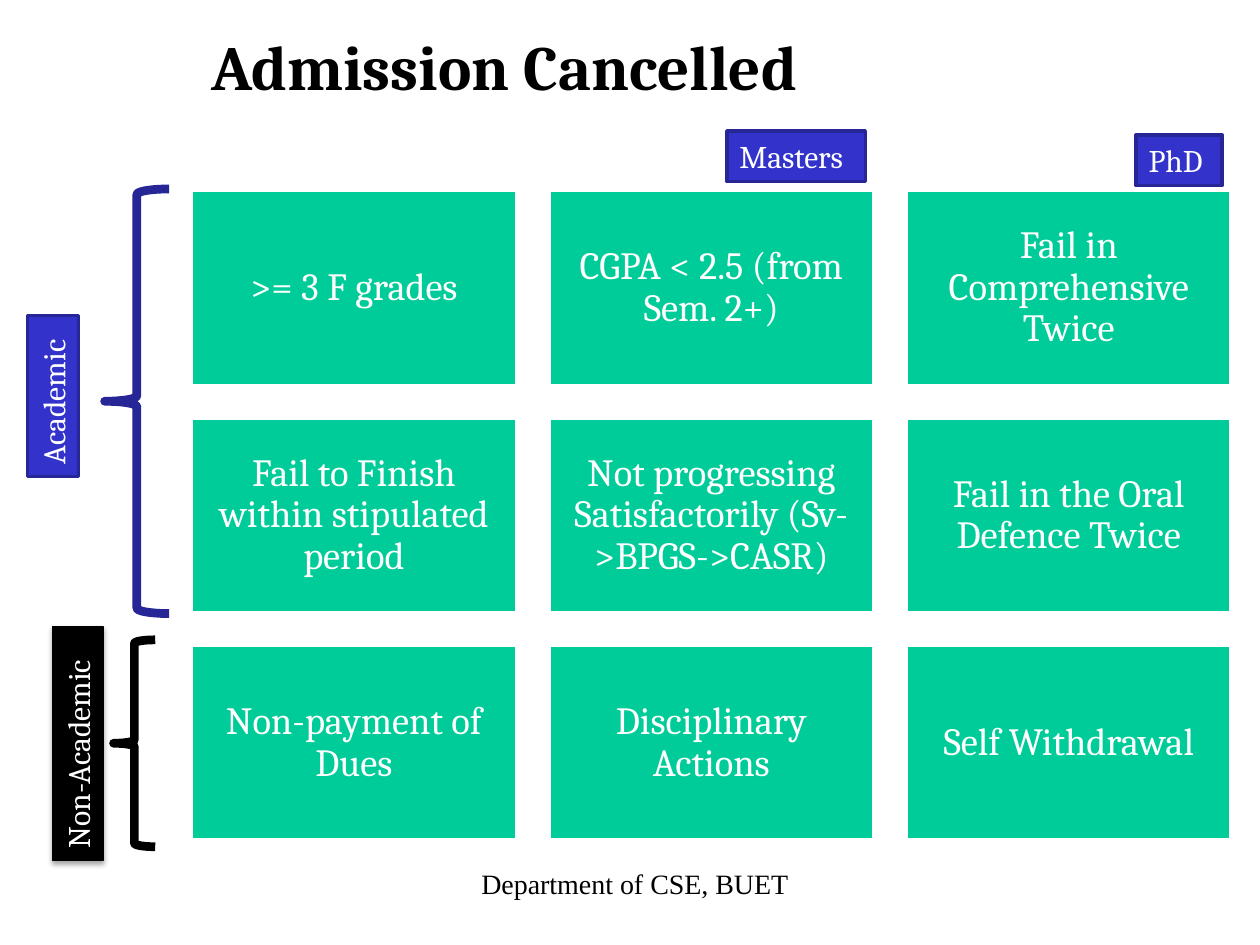
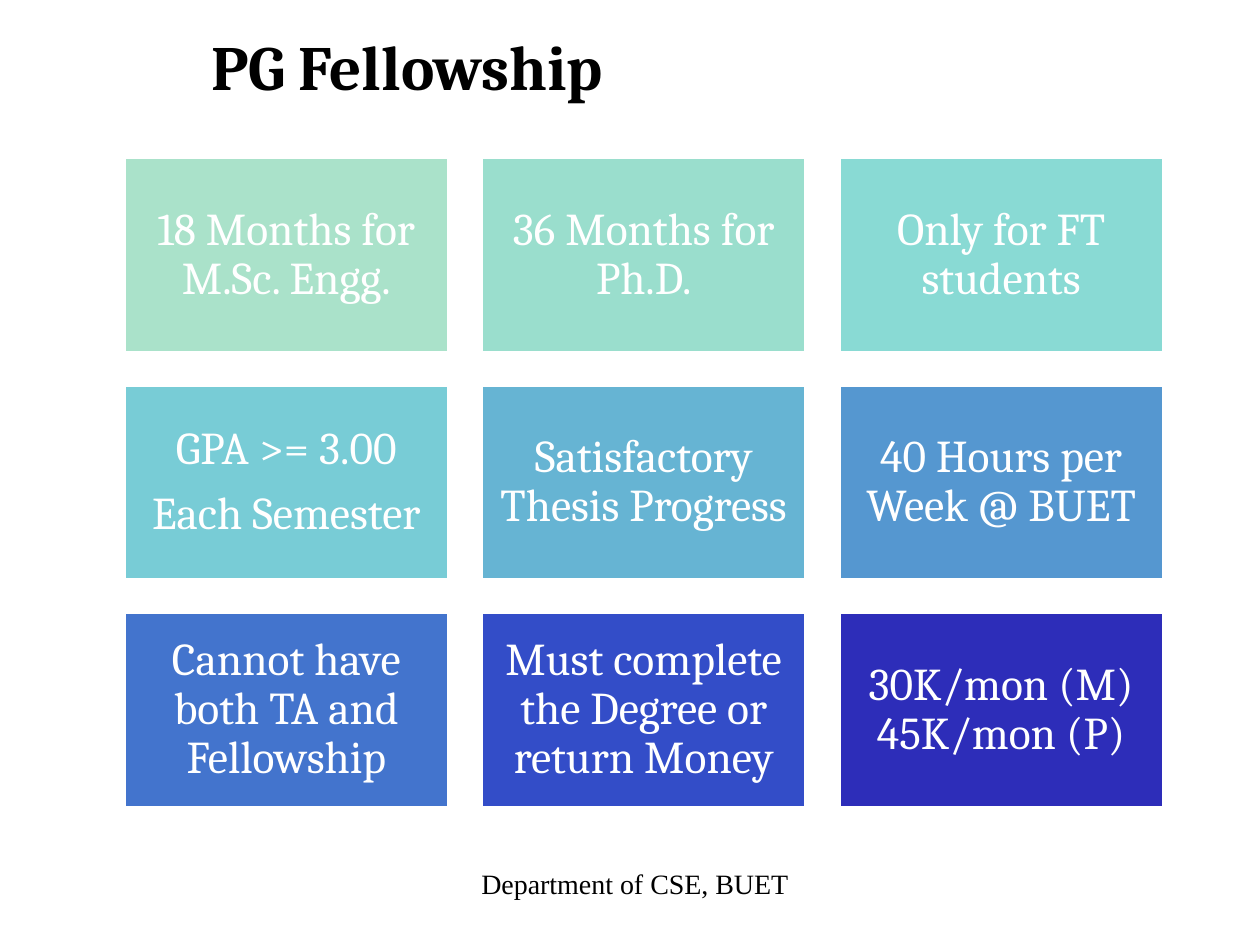
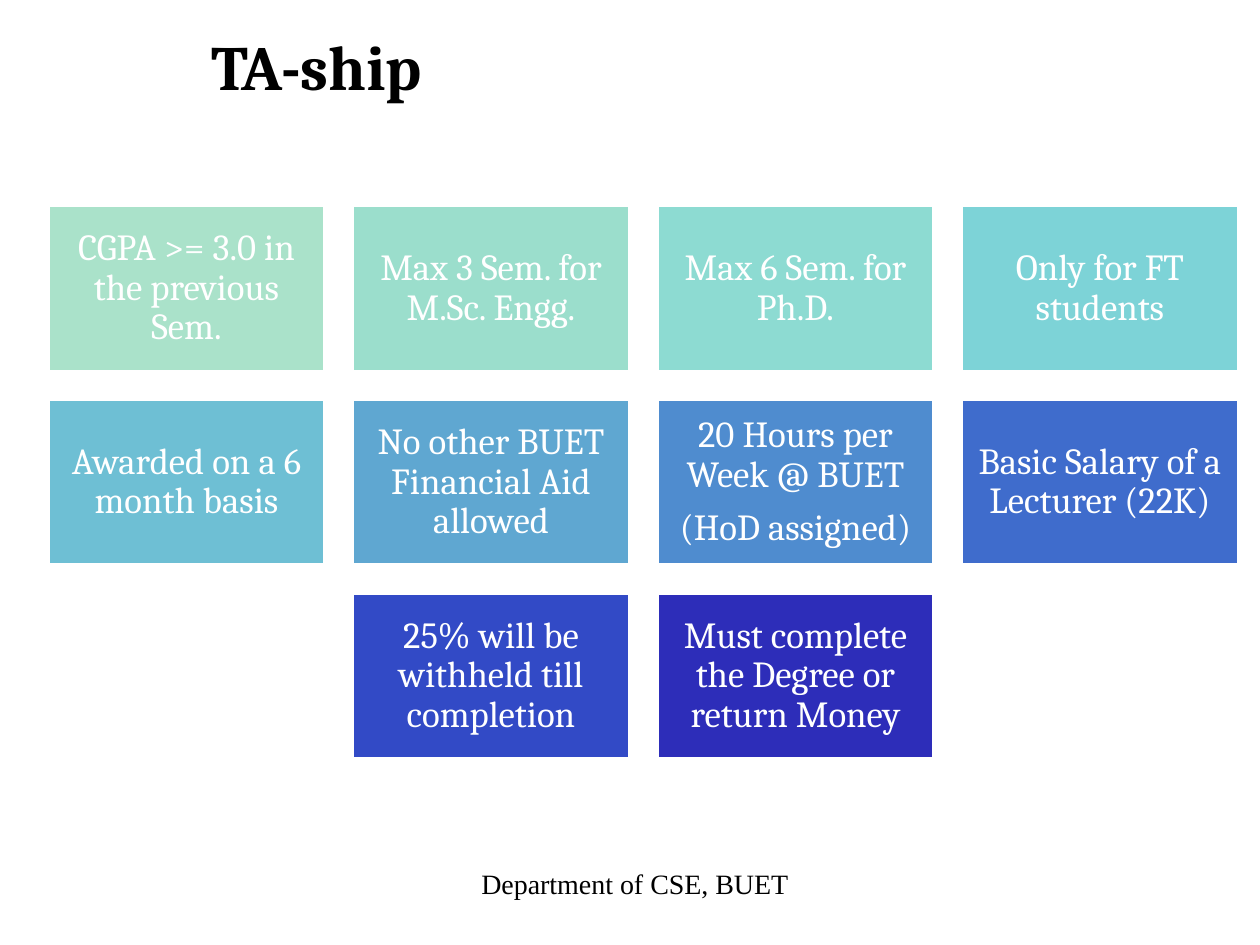
import dataclasses

import lxml.etree
import pptx
import pptx.dml.color
import pptx.enum.shapes
import pptx.enum.text
import pptx.oxml.ns
import pptx.util

Cm, Pt = pptx.util.Cm, pptx.util.Pt
SHAPES = pptx.enum.shapes.MSO_SHAPE
ALIGN = pptx.enum.text.PP_ALIGN
ANCHOR = pptx.enum.text.MSO_ANCHOR
GROW = pptx.enum.text.MSO_AUTO_SIZE.SHAPE_TO_FIT_TEXT


@dataclasses.dataclass(frozen=True)
class Theme:
    font: str = "Cambria"
    footer_font: str = "Times New Roman"
    black: str = "000000"
    white: str = "FFFFFF"
    green: str = "00CC99"
    blue: str = "3333CC"
    navy: str = "262697"
    title_size: int = 36
    tag_size: int = 18
    footer_size: int = 16


THEME = Theme()
FOOTER = "Department of CSE, BUET"

# A card is (paragraphs, fill); left, top, width and inset are centimetres.
BOARDS = [
    {
        "title": "Admission Cancelled",
        "left": 3.86, "top": 3.84, "width": 6.55, "columns": 3,
        "size": 22, "inset": 0.23,
        "cards": [([reason], THEME.green) for reason in (
            ">= 3 F grades",
            "CGPA < 2.5 (from Sem. 2+)",
            "Fail in Comprehensive Twice",
            "Fail to Finish within stipulated period",
            "Not progressing Satisfactorily (Sv->BPGS->CASR)",
            "Fail in the Oral Defence Twice",
            "Non-payment of Dues",
            "Disciplinary Actions",
            "Self Withdrawal",
        )],
    },
    {
        "title": "PG Fellowship",
        "left": 2.5, "top": 3.18, "width": 6.55, "columns": 3,
        "size": 26, "inset": 0.28,
        "cards": [
            (["18 Months for M.Sc. Engg."], "AAE2CA"),
            (["36 Months for Ph.D."], "9ADECD"),
            (["Only for FT students"], "89DAD4"),
            (["GPA >= 3.00", "Each Semester"], "78CCD6"),
            (["Satisfactory Thesis Progress"], "66B4D3"),
            (["40 Hours per Week @ BUET"], "5597D0"),
            (["Cannot have both TA and Fellowship"], "4374CD"),
            (["Must complete the Degree or return Money"], "334DC8"),
            (["30K/mon (M)\n45K/mon (P)"], "2D2DB9"),
        ],
    },
    {
        "title": "TA-ship",
        "left": 0.97, "top": 4.14, "width": 5.58, "columns": 4,
        "size": 21, "inset": 0.23,
        "cards": [
            (["CGPA >= 3.0 in the previous Sem."], "AAE2CA"),
            (["Max 3 Sem. for M.Sc. Engg."], "9BDECC"),
            (["Max 6 Sem. for Ph.D."], "8DDBD2"),
            (["Only for FT students"], "7DD3D7"),
            (["Awarded on a 6 month basis"], "6EBFD4"),
            (["No other BUET Financial Aid allowed"], "5FA7D1"),
            (["20 Hours per Week @ BUET", "(HoD assigned)"], "4F8CCF"),
            (["Basic Salary of a Lecturer (22K)"], "3F6CCC"),
            (["25% will be withheld till completion"], "324AC6"),
            (["Must complete the Degree or return Money"], "2D2DB9"),
        ],
    },
]

# Text, centre x, centre y, length, rotation, fill, line, line width, shadow
TAGS = [
    ("Masters", 16.05, 3.15, 2.79, 0, THEME.blue, THEME.navy, 2, False),
    ("PhD", 23.77, 3.23, 1.73, 0, THEME.blue, THEME.navy, 2, False),
    ("Non-Academic", 1.57, 14.99, 4.72, 270, THEME.black, THEME.black, 0.75, True),
    ("Academic", 1.07, 7.98, 3.25, 270, THEME.blue, THEME.navy, 2, False),
]
TAG_HEIGHT = 1.02

# Left, top, width, height, colour
BRACES = [
    (2.29, 12.9, 0.84, 4.17, THEME.black),
    (2.11, 3.81, 1.3, 8.56, THEME.navy),
]


def rgb(colour):
    return pptx.dml.color.RGBColor.from_string(colour)


def write(frame, paragraphs, *, size, colour, font=THEME.font, bold=False,
          align=ALIGN.LEFT, anchor=ANCHOR.TOP, wrap=True, inset=None,
          line_spacing=None, space_after=None):
    frame.word_wrap = wrap
    frame.vertical_anchor = anchor
    if inset is not None:
        frame.margin_left = frame.margin_right = Cm(inset)
        frame.margin_top = frame.margin_bottom = Cm(inset)
    for index, text in enumerate(paragraphs):
        paragraph = frame.add_paragraph() if index else frame.paragraphs[0]
        paragraph.text = text
        paragraph.alignment = align
        paragraph.line_spacing = line_spacing
        paragraph.space_after = space_after
        for run in paragraph.runs:
            run.font.name = font
            run.font.size = Pt(size)
            run.font.bold = bold
            run.font.color.rgb = rgb(colour)


def add_shape(slide, preset, left, top, width, height, line, line_width, fill=None):
    shape = slide.shapes.add_shape(preset, Cm(left), Cm(top), Cm(width), Cm(height))
    shape.shadow.inherit = False
    shape.line.color.rgb = rgb(line)
    shape.line.width = Pt(line_width)
    if fill:
        shape.fill.solid()
        shape.fill.fore_color.rgb = rgb(fill)
    else:
        shape.fill.background()
    return shape


def drop_shadow(shape):
    qn = pptx.oxml.ns.qn
    effects = shape.element.spPr.find(qn("a:effectLst"))
    shadow = lxml.etree.SubElement(
        effects, qn("a:outerShdw"), blurRad=str(Pt(3.1)), dist=str(Pt(1.8)),
        dir="5400000", rotWithShape="0")
    black = lxml.etree.SubElement(shadow, qn("a:srgbClr"), val=THEME.black)
    lxml.etree.SubElement(black, qn("a:alpha"), val="35000")


def add_title_and_footer(slide, title):
    heading = slide.shapes.add_textbox(Cm(4.01), Cm(0.18), Cm(20.98), Cm(2.29))
    write(heading.text_frame, [title], size=THEME.title_size, colour=THEME.black,
          bold=True, anchor=ANCHOR.MIDDLE)
    footer = slide.shapes.add_textbox(Cm(1.27), Cm(17.35), Cm(23.06), Cm(0.94))
    write(footer.text_frame, [FOOTER], size=THEME.footer_size, colour=THEME.black,
          font=THEME.footer_font, align=ALIGN.CENTER)


def add_cards(slide, board):
    """Lay the cards out in rows, with a short last row centred."""
    width, columns, cards = board["width"], board["columns"], board["cards"]
    height, gap = 0.6 * width, 0.1 * width
    for index, (paragraphs, fill) in enumerate(cards):
        row, column = divmod(index, columns)
        in_row = min(columns, len(cards) - row * columns)
        column += (columns - in_row) / 2
        card = add_shape(slide, SHAPES.RECTANGLE,
                         board["left"] + column * (width + gap),
                         board["top"] + row * (height + gap),
                         width, height, THEME.white, 2, fill)
        write(card.text_frame, paragraphs, size=board["size"], colour=THEME.white,
              align=ALIGN.CENTER, anchor=ANCHOR.MIDDLE, inset=board["inset"],
              line_spacing=0.9, space_after=Pt(0.35 * board["size"]))


def add_categories(slide):
    """Mark the groups of cards with tags and braces."""
    for text, x, y, length, rotation, fill, line, line_width, shadow in TAGS:
        tag = add_shape(slide, SHAPES.RECTANGLE, x - length / 2, y - TAG_HEIGHT / 2,
                        length, TAG_HEIGHT, line, line_width, fill)
        tag.rotation = rotation
        write(tag.text_frame, [text], size=THEME.tag_size, colour=THEME.white, wrap=False)
        tag.text_frame.auto_size = GROW
        if shadow:
            drop_shadow(tag)
    for left, top, width, height, colour in BRACES:
        add_shape(slide, SHAPES.LEFT_BRACE, left, top, width, height, colour, 5)


def main():
    deck = pptx.Presentation()
    deck.slide_width, deck.slide_height = Cm(25.4), Cm(19.05)
    blank = deck.slide_layouts[6]
    for board in BOARDS:
        slide = deck.slides.add_slide(blank)
        add_title_and_footer(slide, board["title"])
        add_cards(slide, board)
    add_categories(deck.slides[0])
    deck.save("out.pptx")


if __name__ == "__main__":
    main()
